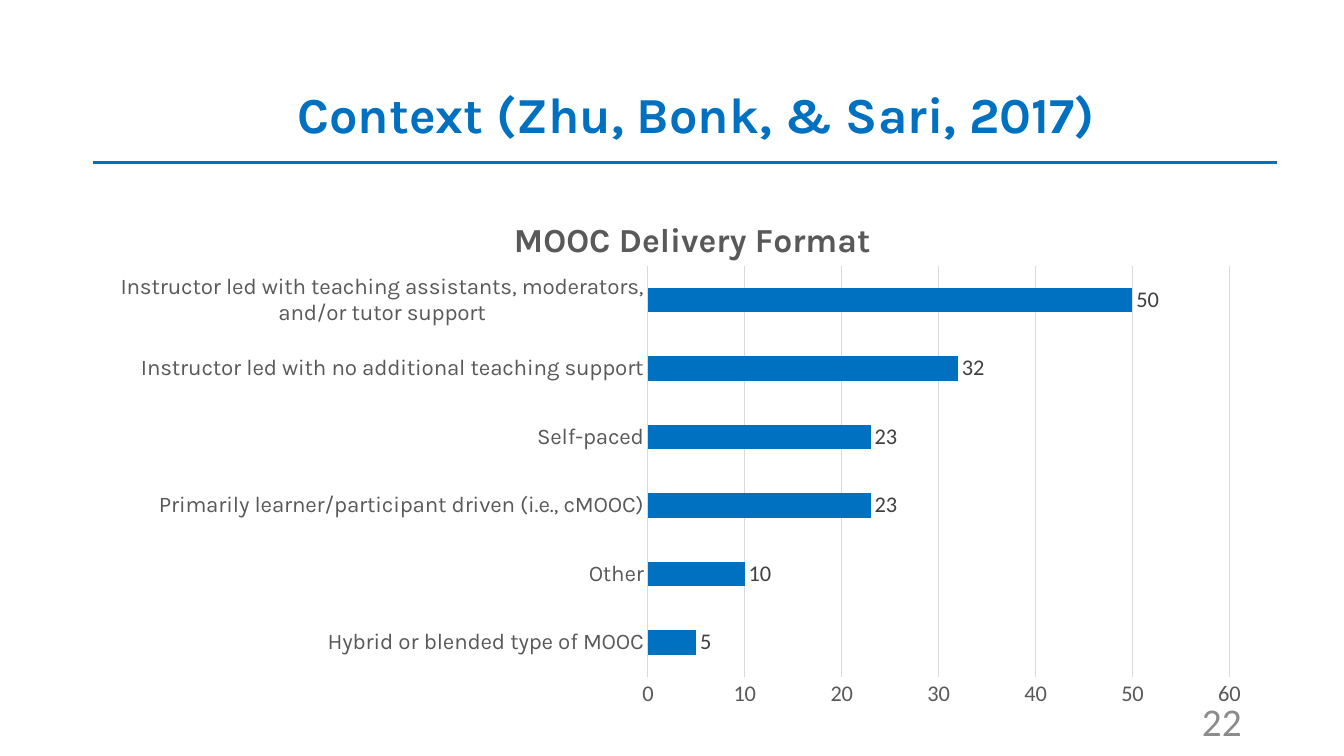
from lxml import etree
from pptx import Presentation
from pptx.chart.data import CategoryChartData
from pptx.dml.color import RGBColor
from pptx.enum.chart import XL_CHART_TYPE, XL_LABEL_POSITION, XL_TICK_MARK
from pptx.enum.shapes import MSO_CONNECTOR
from pptx.enum.text import MSO_ANCHOR, PP_ALIGN
from pptx.oxml.ns import qn
from pptx.util import Pt

BAR = XL_CHART_TYPE.BAR_CLUSTERED
OUT_END = XL_LABEL_POSITION.OUTSIDE_END
NO_TICK = XL_TICK_MARK.NONE
STRAIGHT = MSO_CONNECTOR.STRAIGHT
MIDDLE = MSO_ANCHOR.MIDDLE
CENTER = PP_ALIGN.CENTER
RIGHT = PP_ALIGN.RIGHT

BLUE = RGBColor(0x00, 0x70, 0xC0)
GRAY = RGBColor(0x59, 0x59, 0x59)
DARK = RGBColor(0x40, 0x40, 0x40)
PALE = RGBColor(0xD9, 0xD9, 0xD9)
MUTED = RGBColor(0x8C, 0x8C, 0x8C)
BLACK = RGBColor(0x00, 0x00, 0x00)
HEAD = "Karla"
BODY = "Calibri"

FORMATS = [
    ("Hybrid or blended type of MOOC", 5),
    ("Other", 10),
    ("Primarily learner/participant driven (i.e., cMOOC)", 23),
    ("Self-paced", 23),
    ("Instructor led with no additional teaching support", 32),
    ("Instructor led with teaching assistants, moderators, and/or tutor support", 50),
]


def style(font, name, size, color, bold=False):
    font.name = name
    font.size = Pt(size)
    font.bold = bold
    font.color.rgb = color


def add_title(slide, box, text):
    left, top, width, height = box
    title = slide.shapes.title
    title.left, title.top = Pt(left), Pt(top)
    title.width, title.height = Pt(width), Pt(height)
    frame = title.text_frame
    frame.text = text
    frame.vertical_anchor = MIDDLE
    para = frame.paragraphs[0]
    para.alignment = CENTER
    para.line_spacing = 0.9
    style(para.font, HEAD, 36, BLUE, True)

    level = Pt(top + 0.81 * height)
    rule = slide.shapes.add_connector(
        STRAIGHT, Pt(left + 16), level, Pt(left + width - 32), level)
    rule.line.color.rgb = BLUE
    rule.line.width = Pt(2)
    etree.SubElement(rule.line._get_or_add_ln().getparent(), qn("a:effectLst"))


def add_number(slide, box, text):
    frame = slide.shapes.add_textbox(*map(Pt, box)).text_frame
    frame.word_wrap = True
    frame.vertical_anchor = MIDDLE
    frame.text = text
    para = frame.paragraphs[0]
    para.alignment = RIGHT
    style(para.font, BODY, 28, MUTED)


def set_layout(parent, before, values):
    for old in parent.findall(qn("c:layout")):
        parent.remove(old)
    layout = etree.Element(qn("c:layout"))
    manual = etree.SubElement(layout, qn("c:manualLayout"))
    for tag, value in values.items():
        etree.SubElement(manual, qn("c:" + tag)).set("val", str(value))
    if before is None:
        parent.insert(0, layout)
    else:
        before.addnext(layout)


def style_axis(axis, font):
    axis.major_tick_mark = NO_TICK
    axis.minor_tick_mark = NO_TICK
    style(axis.tick_labels.font, font, 16, GRAY)


def add_bars(slide, box, text):
    data = CategoryChartData(number_format="0")
    data.categories = [name for name, count in FORMATS]
    data.add_series("Series 1", [count for name, count in FORMATS])
    chart = slide.shapes.add_chart(BAR, *map(Pt, box), data).chart
    style(chart.font, BODY, 10, BLACK)
    chart.has_legend = False

    chart.has_title = True
    chart.chart_title.include_in_layout = False
    frame = chart.chart_title.text_frame
    frame.text = text
    style(frame.paragraphs[0].font, HEAD, 24, GRAY, True)

    names, scale = chart.category_axis, chart.value_axis
    style_axis(names, HEAD)
    names.format.line.color.rgb = PALE
    names.format.line.width = Pt(0.75)
    style_axis(scale, BODY)
    scale.minimum_scale = 0
    scale.maximum_scale = 60
    scale.major_unit = 10
    scale.format.line.fill.background()
    grid = scale.major_gridlines.format.line
    grid.color.rgb = PALE
    grid.width = Pt(0.75)

    plot = chart.plots[0]
    plot.gap_width = 182
    plot.vary_by_categories = False
    fill = plot.series[0].format.fill
    fill.solid()
    fill.fore_color.rgb = BLUE
    plot.has_data_labels = True
    labels = plot.data_labels
    labels.show_value = True
    labels.position = OUT_END
    style(labels.font, BODY, 16, DARK)

    root = chart._chartSpace
    heading = root.find(".//" + qn("c:title"))
    set_layout(heading, heading.find(qn("c:tx")),
               {"xMode": "edge", "yMode": "edge", "x": 0.34, "y": 0.04})
    set_layout(root.find(".//" + qn("c:plotArea")), None,
               {"layoutTarget": "inner", "xMode": "edge", "yMode": "edge",
                "x": 0.462, "y": 0.143, "w": 0.507, "h": 0.778})


def main():
    deck = Presentation()
    deck.slide_width, deck.slide_height = Pt(960), Pt(540)
    slide = deck.slides.add_slide(deck.slide_layouts[5])
    add_title(slide, (50.4, 31.7, 894, 104.4), "Context (Zhu, Bonk, & Sari, 2017)")
    add_number(slide, (678, 500.5, 216, 28.8), "22")
    add_bars(slide, (84.2, 136, 819.4, 377.3), "MOOC Delivery Format")
    deck.save("out.pptx")


if __name__ == "__main__":
    main()
